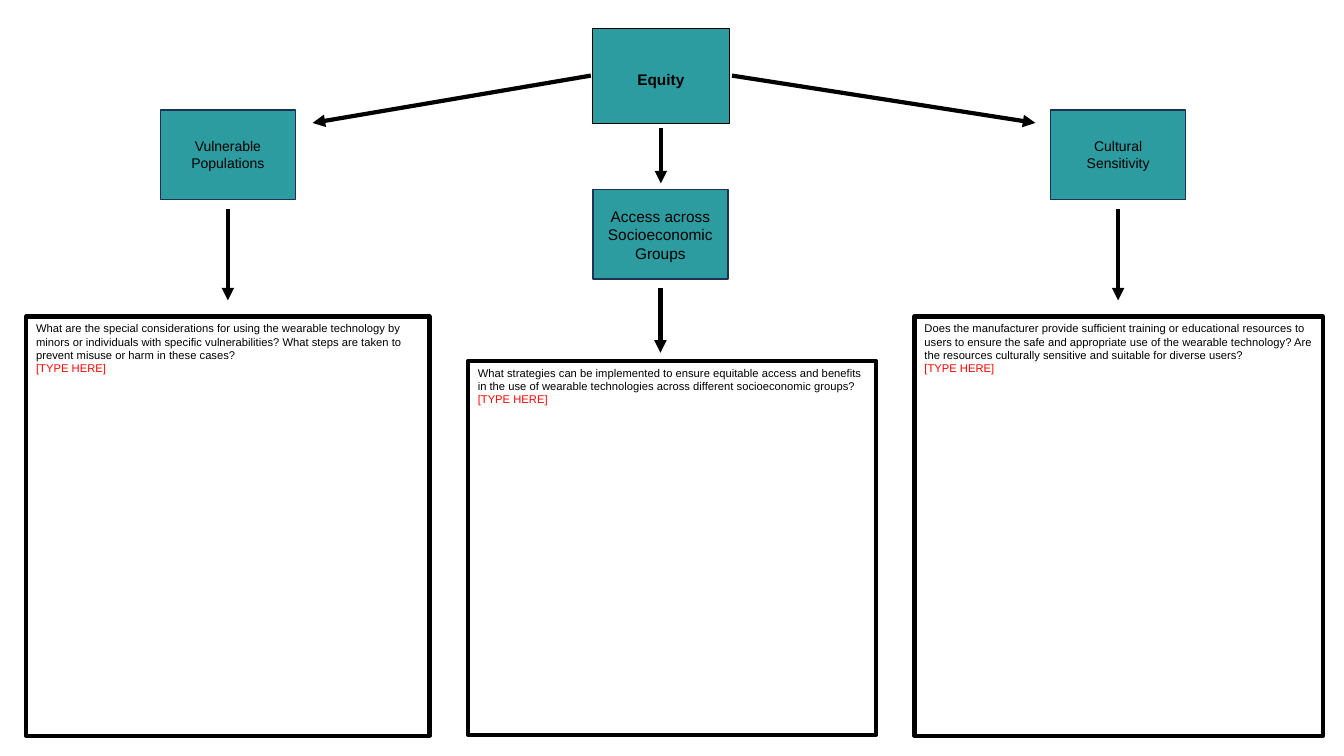
from lxml import etree
from pptx import Presentation
from pptx.dml.color import RGBColor
from pptx.enum import shapes, text
from pptx.oxml import ns
from pptx.util import Inches, Pt

TEAL = RGBColor(0x2C, 0x9C, 0xA0)
NAVY = RGBColor(0x1E, 0x32, 0x56)
BLACK = RGBColor(0, 0, 0)
WHITE = RGBColor(255, 255, 255)
RED = RGBColor(255, 0, 0)

TOPIC_W, TOPIC_H = 1.34, 0.89
EQUITY = (5.88, 0.28, 1.35, 0.94)
PROMPT = "[TYPE HERE]"

# Topic corner, topic text, text size, question box, question, arrow gap above box
COLUMNS = [
    ((1.59, 1.09), "Vulnerable Populations", 10, (0.26, 3.14, 4, 4.16),
     "What are the special considerations for using the wearable technology by "
     "minors or individuals with specific vulnerabilities? What steps are taken "
     "to prevent misuse or harm in these cases?", 0.16),
    ((5.88, 1.88), "Access across Socioeconomic Groups", 11, (4.64, 3.58, 4.05, 3.71),
     "What strategies can be implemented to ensure equitable access and benefits "
     "in the use of wearable technologies across different socioeconomic groups?", 0.08),
    ((10.42, 1.09), "Cultural\nSensitivity", 10, (9.07, 3.14, 4.05, 4.16),
     "Does the manufacturer provide sufficient training or educational resources "
     "to users to ensure the safe and appropriate use of the wearable technology? "
     "Are the resources culturally sensitive and suitable for diverse users?", 0.16),
]


def add_box(slide, box, words, size, fill, line, width, align, anchor):
    sp = slide.shapes.add_shape(shapes.MSO_SHAPE.RECTANGLE, *map(Inches, box))
    sp.shadow.inherit = False
    sp.fill.solid()
    sp.fill.fore_color.rgb = fill
    sp.line.color.rgb = line
    sp.line.width = Pt(width)
    tf = sp.text_frame
    tf.word_wrap = True
    tf.vertical_anchor = anchor
    tf.text = words
    for p in tf.paragraphs:
        p.alignment = align
        p.font.name = "Arial"
        p.font.size = Pt(size)
        p.font.color.rgb = BLACK
    return sp


def add_arrow(slide, x1, y1, x2, y2):
    cxn = slide.shapes.add_connector(
        shapes.MSO_CONNECTOR.STRAIGHT, *map(Inches, (x1, y1, x2, y2)))
    cxn.line.color.rgb = BLACK
    cxn.line.width = Pt(3)
    ln = cxn.line._get_or_add_ln()
    etree.SubElement(ln, ns.qn("a:tailEnd"), type="triangle")
    etree.SubElement(cxn._element.spPr, ns.qn("a:effectLst"))


def add_equity(slide, box):
    x, y, w, h = box
    sp = add_box(slide, box, "Equity", 11, TEAL, BLACK, 0.5,
                 text.PP_ALIGN.CENTER, text.MSO_ANCHOR.MIDDLE)
    sp.text_frame.margin_top = Inches(0.13)
    sp.text_frame.paragraphs[0].font.bold = True

    # Arrows to the three topics
    mid_x, mid_y, bottom = x + w / 2, y + h / 2, y + h
    add_arrow(slide, x - 0.02, mid_y, 3.1, mid_y + 0.47)
    add_arrow(slide, x + w + 0.03, mid_y, 10.27, mid_y + 0.47)
    add_arrow(slide, mid_x, bottom + 0.05, mid_x, bottom + 0.6)


def add_column(slide, corner, topic, size, box, question, gap):
    x, y = corner
    # Topic
    add_box(slide, (x, y, TOPIC_W, TOPIC_H), topic, size, TEAL, NAVY, 1,
            text.PP_ALIGN.CENTER, text.MSO_ANCHOR.MIDDLE)
    # Question with a prompt for the answer
    sp = add_box(slide, box, f"{question}\n{PROMPT}", 8, WHITE, BLACK, 3,
                 text.PP_ALIGN.LEFT, text.MSO_ANCHOR.TOP)
    sp.text_frame.paragraphs[-1].font.color.rgb = RED
    # Arrow from topic to question
    mid_x = x + TOPIC_W / 2
    add_arrow(slide, mid_x, y + TOPIC_H + 0.09, mid_x, box[1] - gap)


def main():
    prs = Presentation()
    prs.slide_width, prs.slide_height = Inches(13.33), Inches(7.5)
    slide = prs.slides.add_slide(prs.slide_layouts[6])
    add_equity(slide, EQUITY)
    for column in COLUMNS:
        add_column(slide, *column)
    prs.save("out.pptx")


if __name__ == "__main__":
    main()
